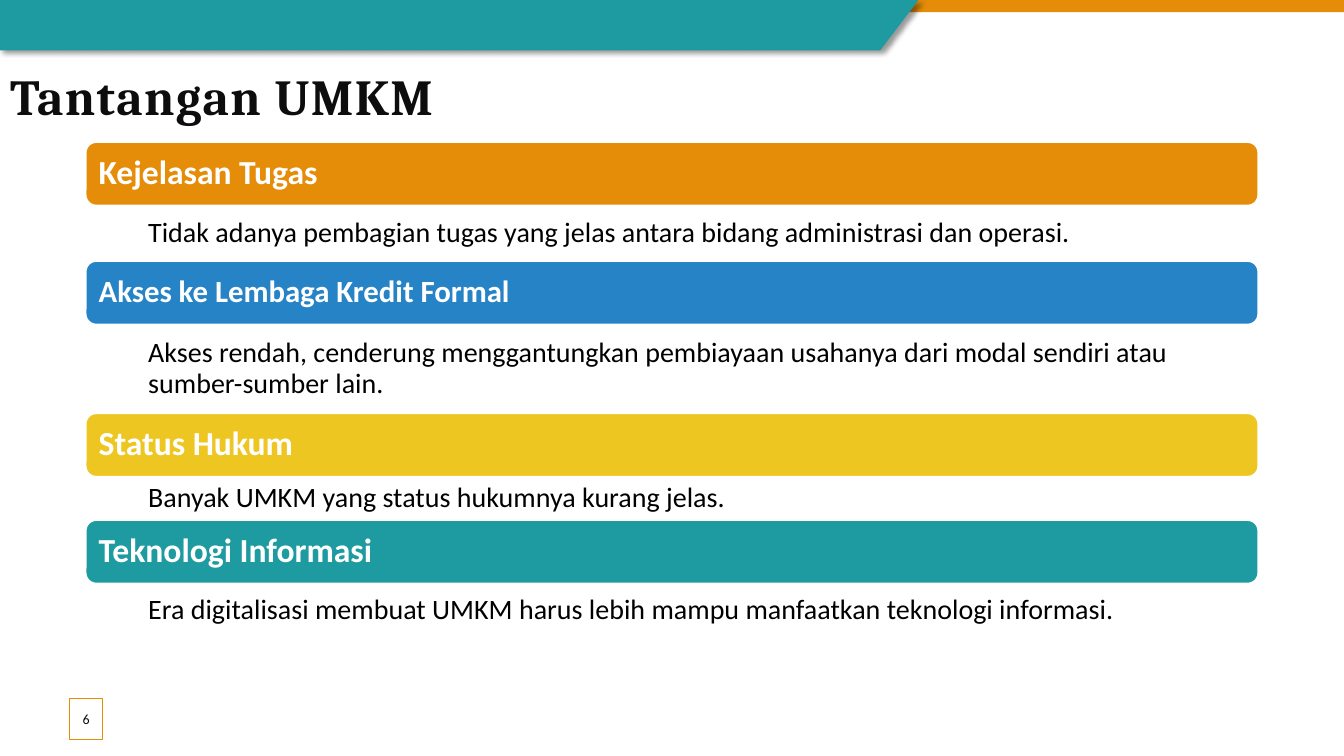
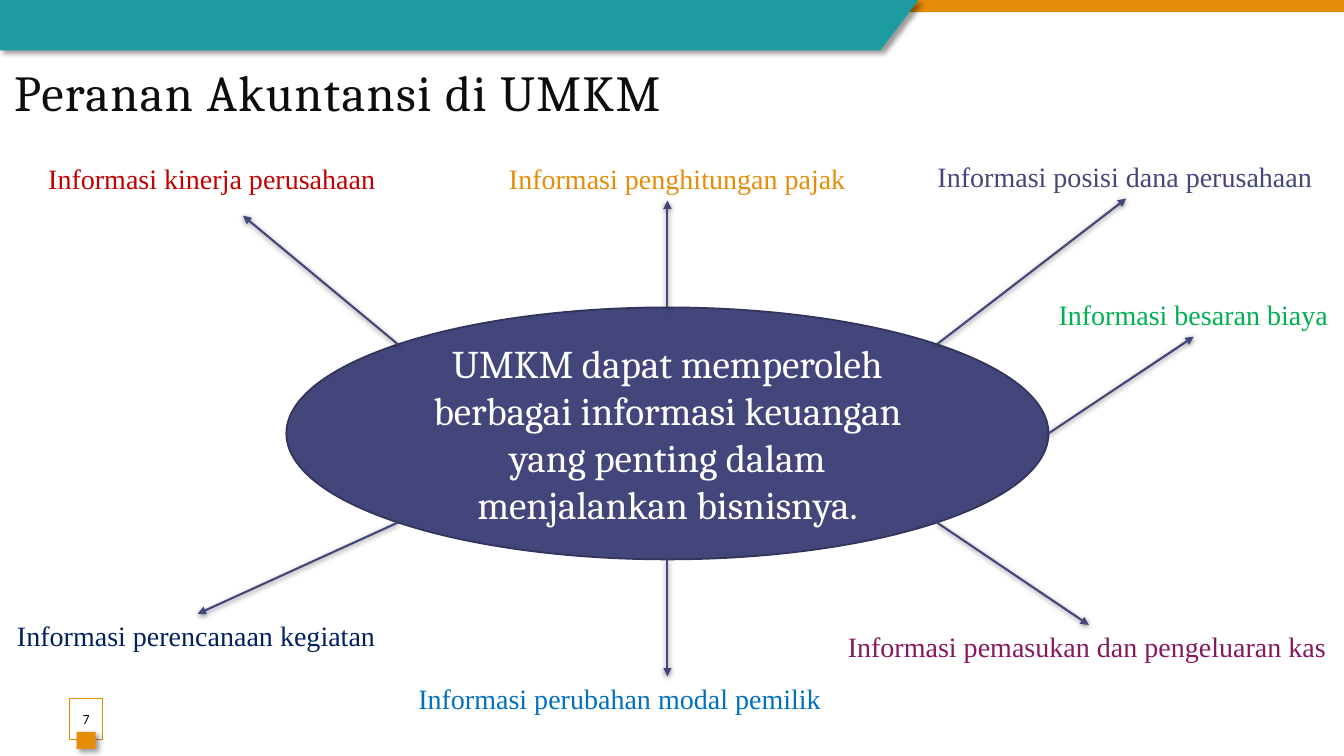
from math import cos, radians, sin

from lxml import etree
from pptx import Presentation
from pptx.dml.color import RGBColor
from pptx.enum import shapes as kinds, text as textenum
from pptx.oxml.ns import qn
from pptx.util import Inches, Pt

COLORS = {
    "orange": "E58C09", "teal": "1D9BA1", "blue": "2683C6", "yellow": "EEC621",
    "indigo": "43467B", "indigo_edge": "32345B", "white": "FFFFFF",
    "ink": "0D0D0D", "black": "000000", "red": "C00000", "green": "00B050",
    "navy": "002060", "sky": "0070C0", "plum": "87175F",
}
ALIGN = textenum.PP_ALIGN
ANCHOR = textenum.MSO_ANCHOR
SHAPE = kinds.MSO_SHAPE

CHALLENGES = [  # heading, heading size, colour, explanation, explanation height
    ("Kejelasan Tugas", 24, "orange",
     "Tidak adanya pembagian tugas yang jelas antara bidang administrasi dan operasi.", 0.55),
    ("Akses ke Lembaga Kredit Formal", 22, "blue",
     "Akses rendah, cenderung menggantungkan pembiayaan usahanya dari modal sendiri "
     "atau sumber-sumber lain.", 0.88),
    ("Status Hukum", 24, "yellow",
     "Banyak UMKM yang status hukumnya kurang jelas.", 0.43),
    ("Teknologi Informasi", 24, "teal",
     "Era digitalisasi membuat UMKM harus lebih mampu manfaatkan teknologi informasi.", 0.54),
]
BENEFITS = [  # label, colour, label box (left, top, width), arrow angle, arrow tip
    ("Informasi kinerja perusahaan", "red", (0.38, 1.55, 3.47), 225, (2.41, 2.14)),
    ("Informasi penghitungan pajak", "orange", (4.95, 1.55, 3.56), 270, (6.62, 1.99)),
    ("Informasi posisi dana perusahaan", "indigo", (9.2, 1.53, 3.94), 315, (11.17, 1.97)),
    ("Informasi besaran biaya", "green", (10.4, 2.9, 2.89), 0, (11.84, 3.34)),
    ("Informasi perencanaan kegiatan", "navy", (0.07, 6.09, 3.78), 135, (1.96, 6.09)),
    ("Informasi perubahan modal pemilik", "sky", (4.05, 6.71, 4.22), 90, (6.62, 6.71)),
    ("Informasi pemasukan dan pengeluaran kas", "plum", (8.31, 6.2, 4.98), 45, (10.8, 6.2)),
]


def rgb(name):
    return RGBColor.from_string(COLORS[name])


def write(frame, content, size, color, font="Calibri", bold=False, align=ALIGN.LEFT,
          anchor=ANCHOR.MIDDLE, wrap=True, insets=(0.1, 0.05, 0.1, 0.05), leading=None,
          tracking=None):
    frame.word_wrap = wrap
    frame.auto_size = textenum.MSO_AUTO_SIZE.NONE
    frame.vertical_anchor = anchor
    (frame.margin_left, frame.margin_top,
     frame.margin_right, frame.margin_bottom) = map(Inches, insets)
    paragraph = frame.paragraphs[0]
    paragraph.alignment = align
    paragraph.line_spacing = leading
    run = paragraph.add_run()
    run.text = content
    run.font.size, run.font.name, run.font.bold = Pt(size), font, bold
    run.font.color.rgb = rgb(color)
    if tracking:
        run.font._element.set("spc", str(tracking * 100))


def cast_shadow(item, alpha, blur, distance, angle):
    properties = item._element.spPr
    effects = properties.find(qn("a:effectLst"))
    if effects is None:
        effects = etree.SubElement(properties, qn("a:effectLst"))
    shadow = etree.SubElement(
        effects, qn("a:outerShdw"), blurRad=str(Pt(blur)), dist=str(Pt(distance)),
        dir=str(angle * 60000), algn="tl", rotWithShape="0")
    shade = etree.SubElement(shadow, qn("a:srgbClr"), val=COLORS["black"])
    etree.SubElement(shade, qn("a:alpha"), val=str(alpha * 1000))


def paint(item, fill, edge=None, weight=1.25):
    item.shadow.inherit = False
    item.fill.solid()
    item.fill.fore_color.rgb = rgb(fill)
    if edge:
        item.line.color.rgb = rgb(edge)
        item.line.width = Pt(weight)
    else:
        item.line.fill.background()


def add_block(slide, kind, box, fill, edge=None, weight=1.25):
    block = slide.shapes.add_shape(kind, *map(Inches, box))
    paint(block, fill, edge, weight)
    return block


def add_label(slide, box, content, **style):
    write(slide.shapes.add_textbox(*map(Inches, box)).text_frame, content, **style)


def add_arrow(slide, start, tip):
    arrow = slide.shapes.add_connector(
        kinds.MSO_CONNECTOR.STRAIGHT, *map(Inches, (*start, *tip)))
    arrow.line.color.rgb = rgb("indigo")
    arrow.line.width = Pt(1.5)
    etree.SubElement(arrow.line._get_or_add_ln(), qn("a:tailEnd"), type="triangle")
    cast_shadow(arrow, 50, 4, 1, 90)


def add_bands(slide):
    add_block(slide, SHAPE.RECTANGLE, (0, 0, 13.33, 0.12), "orange")
    outline = slide.shapes.build_freeform(0, 0, scale=Inches(0.01))
    outline.add_line_segments([(911, 0), (873, 50), (0, 50)], close=True)
    ribbon = outline.convert_to_shape()
    paint(ribbon, "teal")
    cast_shadow(ribbon, 40, 4, 3, 45)


def add_page_number(slide, number):
    badge = add_block(slide, SHAPE.RECTANGLE, (0.69, 6.93, 0.33, 0.41), "white", "orange", 0.75)
    fill_color = badge._element.spPr.find(qn("a:solidFill"))[0]
    etree.SubElement(fill_color, qn("a:alpha"), val="82000")
    write(badge.text_frame, str(number), 10, "ink", align=ALIGN.CENTER,
          insets=(0, 0.05, 0, 0.05))


def start_slide(deck, heading, left, top, number, bold=False):
    """Add a slide with the shared bands, title and page number."""
    slide = deck.slides.add_slide(deck.slide_layouts[5])
    add_bands(slide)
    title = slide.shapes.title
    title.left, title.top, title.width, title.height = map(Inches, (left, top, 11.82, 0.77))
    write(title.text_frame, heading, 36, "ink", font="Cambria", bold=bold,
          anchor=ANCHOR.TOP, tracking=1)
    add_page_number(slide, number)
    return slide


def add_challenge_list(slide, left, top, width, bar_height=0.63):
    for heading, size, color, explanation, height in CHALLENGES:
        bar = add_block(slide, SHAPE.ROUNDED_RECTANGLE, (left, top, width, bar_height),
                        color, "white")
        write(bar.text_frame, heading, size, "white", bold=True, leading=0.9)
        top += bar_height
        add_label(slide, (left, top, width, height), explanation, size=20, color="black",
                  insets=(0.62, 0.03, 0.16, 0.03), leading=0.9)
        top += height


def add_benefit_map(slide, left, top, width, height):
    """Draw the central ellipse, with arrows from its edge to the labels around it."""
    hub = add_block(slide, SHAPE.OVAL, (left, top, width, height), "indigo", "indigo_edge")
    write(hub.text_frame, "UMKM dapat memperoleh berbagai informasi keuangan yang penting "
          "dalam menjalankan bisnisnya.", 28, "white", font="Cambria", align=ALIGN.CENTER)
    for label, color, place, angle, tip in BENEFITS:
        add_label(slide, (*place, 0.44), label, size=20, color=color,
                  font="Times New Roman", wrap=False, anchor=ANCHOR.TOP)
        turn = radians(angle)
        edge = (left + width / 2 * (1 + cos(turn)), top + height / 2 * (1 + sin(turn)))
        add_arrow(slide, edge, tip)


def challenges_slide(deck):
    slide = start_slide(deck, "Tantangan UMKM", 0, 0.6, 6, bold=True)
    add_challenge_list(slide, 0.85, 1.41, 11.63)


def accounting_slide(deck):
    slide = start_slide(deck, "Peranan Akuntansi di UMKM", 0.04, 0.56, 7)
    marker = add_block(slide, SHAPE.RECTANGLE, (0.76, 7.26, 0.19, 0.17), "orange")
    cast_shadow(marker, 40, 4, 3, 45)
    add_benefit_map(slide, 2.84, 3.05, 7.56, 2.5)


def main():
    deck = Presentation()
    deck.slide_width, deck.slide_height = Inches(13.33), Inches(7.5)
    challenges_slide(deck)
    accounting_slide(deck)
    deck.save("out.pptx")


if __name__ == "__main__":
    main()
